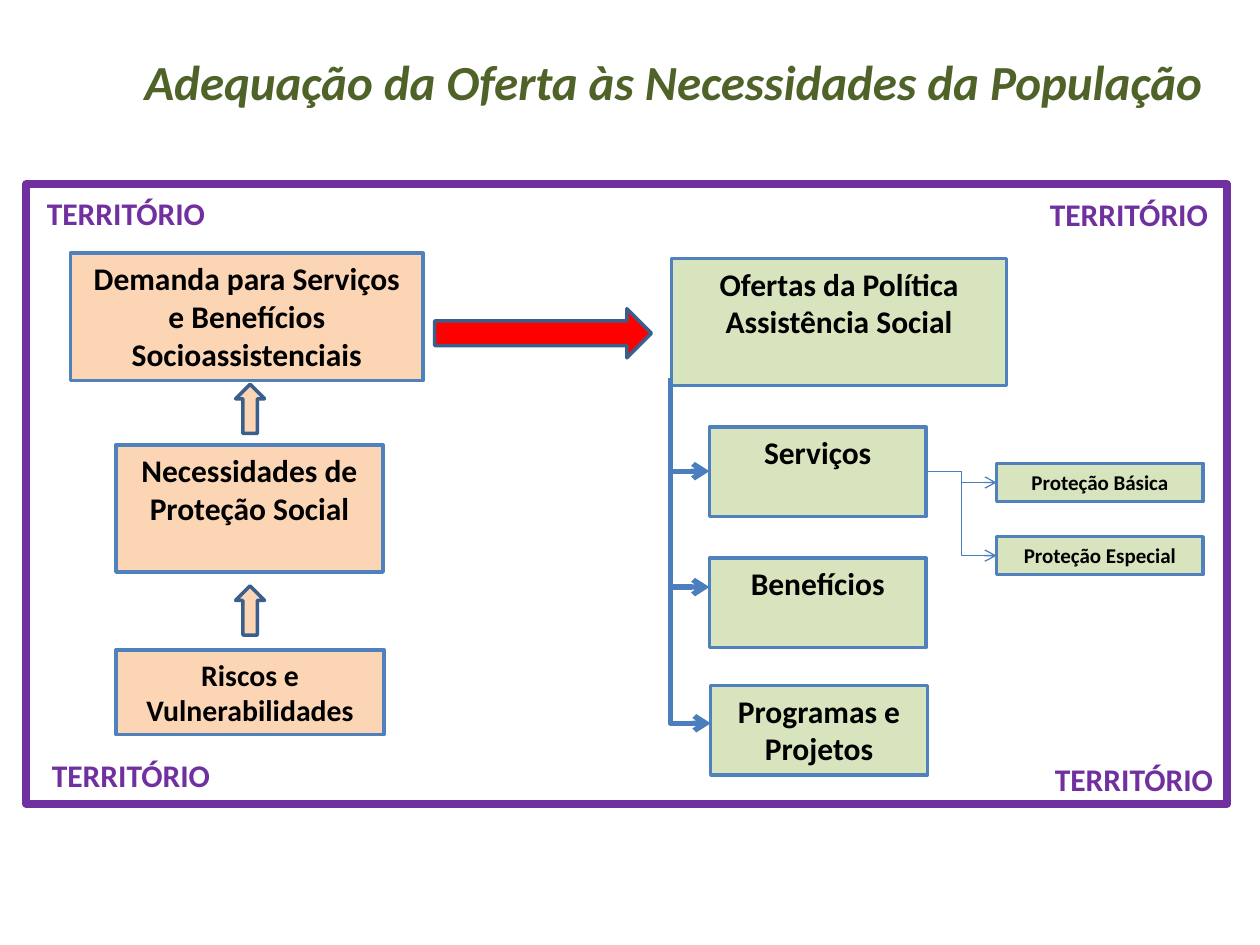
import pptx
import pptx.util
import pptx.dml.color
import pptx.enum.shapes
import pptx.enum.text
import pptx.oxml
import pptx.oxml.ns

Inches = pptx.util.Inches
SHAPE = pptx.enum.shapes.MSO_SHAPE
ALIGN = pptx.enum.text.PP_ALIGN

PEACH, GREEN, RED, WHITE = "FCD5B5", "D7E4BD", "FF0000", "FFFFFF"
BLUE, DARK_BLUE, LINK_BLUE = "4F81BD", "3A5F8C", "4B7EBC"
PURPLE, OLIVE, BLACK = "7030A0", "4F6228", "000000"

DEMAND_BOXES = [
    ("Demanda para Serviços e Benefícios Socioassistenciais", 0.56, 2.01, 2.8, 1.01, 18),
    ("Necessidades de Proteção Social", 0.92, 3.53, 2.12, 1.01, 18),
    ("Riscos e Vulnerabilidades", 0.92, 5.16, 2.13, 0.67, 17),
]
OFFER_BOXES = [("Serviços", 5.63, 3.39), ("Benefícios", 5.63, 4.43), ("Programas e Projetos", 5.64, 5.44)]
PROTECTION_BOXES = [("Proteção Básica", 3.68), ("Proteção Especial", 4.26)]
TERRITORY_CORNERS = [(0.22, 1.49), (0.26, 5.95), (8.22, 5.98), (8.18, 1.5)]


def rgb(color):
    return pptx.dml.color.RGBColor.from_string(color)


def set_text(sp, text, size, color, align=ALIGN.CENTER, italic=False):
    tf = sp.text_frame
    tf.word_wrap = True
    tf.vertical_anchor = pptx.enum.text.MSO_ANCHOR.TOP
    tf.text = text
    p = tf.paragraphs[0]
    p.alignment = align
    font = p.runs[0].font
    font.name, font.size = "Calibri", pptx.util.Pt(size)
    font.bold, font.italic = True, italic
    font.color.rgb = rgb(color)


def add_title(s, text):
    sp = s.shapes.title
    sp.left, sp.top, sp.width, sp.height = map(Inches, (0.27, 0.36, 9.37, 0.57))
    set_text(sp, text, 28, OLIVE, ALIGN.RIGHT, italic=True)
    sp.text_frame.auto_size = pptx.enum.text.MSO_AUTO_SIZE.NONE


def add_shape(s, kind, x, y, w, h, fill, line, weight=2):
    sp = s.shapes.add_shape(kind, Inches(x), Inches(y), Inches(w), Inches(h))
    sp.shadow.inherit = False
    sp.fill.solid()
    sp.fill.fore_color.rgb = rgb(fill)
    sp.line.color.rgb = rgb(line)
    sp.line.width = pptx.util.Pt(weight)
    return sp


def add_box(s, text, x, y, w, h, fill, size=18):
    sp = add_shape(s, SHAPE.RECTANGLE, x, y, w, h, fill, BLUE)
    set_text(sp, text, size, BLACK)
    return sp


def add_label(s, text, x, y):
    sp = s.shapes.add_textbox(Inches(x), Inches(y), Inches(1.56), Inches(0.4))
    set_text(sp, text, 18, PURPLE)


def add_elbow(s, x1, y1, x2, y2, weight):
    c = s.shapes.add_connector(pptx.enum.shapes.MSO_CONNECTOR.ELBOW,
                               Inches(x1), Inches(y1), Inches(x2), Inches(y2))
    c.line.color.rgb = rgb(LINK_BLUE)
    c.line.width = pptx.util.Pt(weight)
    ln = c.line._get_or_add_ln()
    ln.append(pptx.oxml.parse_xml('<a:tailEnd %s type="arrow"/>' % pptx.oxml.ns.nsdecls("a")))
    c._element.spPr.append(pptx.oxml.parse_xml("<a:effectLst %s/>" % pptx.oxml.ns.nsdecls("a")))
    return c


def add_down_then_right(s, x1, y1, x2, y2):
    """One-bend arrow: a mirrored bentConnector2 turned 270 degrees about its centre."""
    cx, cy = (x1 + x2) / 2, (y1 + y2) / 2
    half_w, half_h = (y2 - y1) / 2, (x2 - x1) / 2
    c = add_elbow(s, cx + half_w, cy - half_h, cx - half_w, cy + half_h, 3)
    spPr = c._element.spPr
    spPr.find(pptx.oxml.ns.qn("a:xfrm")).set("rot", str(270 * 60000))
    spPr.find(pptx.oxml.ns.qn("a:prstGeom")).set("prst", "bentConnector2")


def add_demand_side(s):
    for text, x, y, w, h, size in DEMAND_BOXES:
        add_box(s, text, x, y, w, h, PEACH, size)
    for y in (3.05, 4.65):
        add_shape(s, SHAPE.UP_ARROW, 1.87, y, 0.23, 0.39, PEACH, DARK_BLUE)


def add_offer_side(s):
    add_box(s, "Ofertas da Política Assistência Social", 5.33, 2.05, 2.66, 1.01, GREEN)
    offers = [add_box(s, text, x, y, 1.72, 0.71, GREEN) for text, x, y in OFFER_BOXES]
    for y1, x2, y2 in ((3.0, 5.63, 3.74), (3.1, 5.63, 4.66), (3.12, 5.64, 5.74)):
        add_down_then_right(s, 5.32, y1, x2, y2)
    for text, y in PROTECTION_BOXES:
        box = add_box(s, text, 7.91, y, 1.64, 0.3, GREEN, 12)
        c = add_elbow(s, 7.35, 3.74, 7.91, y + 0.15, 0.75)
        c.begin_connect(offers[0], 3)
        c.end_connect(box, 1)


def main():
    prs = pptx.Presentation()
    prs.slide_width, prs.slide_height = Inches(10), Inches(7.5)
    s = prs.slides.add_slide(prs.slide_layouts[5])
    add_title(s, "Adequação da Oferta às Necessidades da População")
    add_shape(s, SHAPE.RECTANGLE, 0.21, 1.46, 9.53, 4.92, WHITE, PURPLE, 4.5)
    add_demand_side(s)
    add_offer_side(s)
    add_shape(s, SHAPE.RIGHT_ARROW, 3.45, 2.45, 1.72, 0.39, RED, DARK_BLUE)
    for x, y in TERRITORY_CORNERS:
        add_label(s, "TERRITÓRIO", x, y)
    prs.save("out.pptx")


if __name__ == "__main__":
    main()
